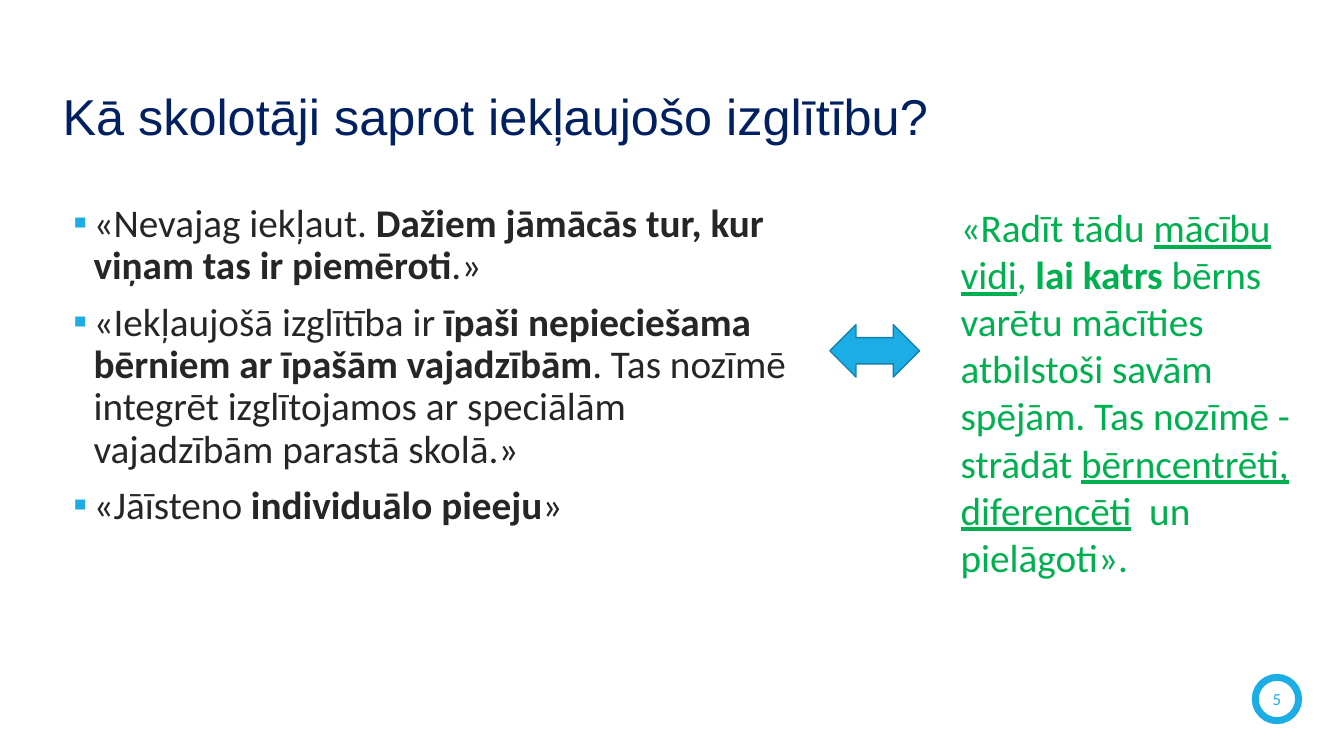
"""Build a slide on how teachers understand inclusive education."""
from lxml.etree import SubElement
from pptx import Presentation
from pptx.dml.color import RGBColor
from pptx.enum.shapes import MSO_SHAPE as Shape
from pptx.enum.text import MSO_ANCHOR as Anchor, MSO_AUTO_SIZE as AutoSize, PP_ALIGN as Align
from pptx.oxml.ns import qn
from pptx.util import Inches, Pt

NAVY = RGBColor(0x00, 0x20, 0x60)
BLUE = RGBColor(0x1C, 0xAD, 0xE4)
DARK_BLUE = RGBColor(0x15, 0x80, 0xA9)
GREEN = RGBColor(0x00, 0xB0, 0x50)
CHARCOAL = RGBColor(0x26, 0x26, 0x26)
WHITE = RGBColor(0xFF, 0xFF, 0xFF)

PLAIN, BOLD, UNDERLINE = "plain", "bold", "underline"

TEACHER_QUOTES = [
    [("«Nevajag iekļaut. ", PLAIN),
     ("Dažiem jāmācās tur, kur viņam tas ir piemēroti", BOLD),
     (".»", PLAIN)],
    [("«Iekļaujošā izglītība ir ", PLAIN),
     ("īpaši nepieciešama bērniem ar īpašām vajadzībām", BOLD),
     (". Tas nozīmē integrēt izglītojamos ar speciālām vajadzībām parastā skolā.»", PLAIN)],
    [("«Jāīsteno ", PLAIN), ("individuālo pieeju", BOLD), ("»", PLAIN)],
]
INCLUSIVE_QUOTE = [
    ("«Radīt tādu ", PLAIN),
    ("mācību vidi", UNDERLINE),
    (", ", PLAIN),
    ("lai katrs ", BOLD),
    ("bērns varētu mācīties atbilstoši savām spējām. Tas nozīmē - strādāt ", PLAIN),
    ("bērncentrēti, diferencēti", UNDERLINE),
    ("  un pielāgoti».", PLAIN),
]


def format_run(run, size, color, font="Calibri", style=PLAIN):
    run.font.name = font
    run.font.size = Pt(size)
    run.font.color.rgb = color
    run.font.bold = style == BOLD
    run.font.underline = style == UNDERLINE


def add_title(slide, text):
    title = slide.shapes.title
    title.left, title.top = Inches(0.52), Inches(0.71)
    title.width, title.height = Inches(10.96), Inches(0.87)
    title.fill.solid()
    title.fill.fore_color.rgb = WHITE
    frame = title.text_frame
    frame.text = text
    frame.auto_size = AutoSize.NONE
    frame.vertical_anchor = Anchor.MIDDLE
    paragraph = frame.paragraphs[0]
    paragraph.alignment = Align.LEFT
    format_run(paragraph.runs[0], 36, NAVY, "Arial")


def add_bullet(paragraph):
    paragraph.line_spacing = 0.9
    paragraph.space_before = Pt(10)
    properties = paragraph._p.get_or_add_pPr()
    properties.set("marL", str(Inches(0.2)))
    properties.set("indent", str(Inches(-0.2)))
    bullet_color = SubElement(properties, qn("a:buClr"))
    SubElement(bullet_color, qn("a:srgbClr"), val=str(BLUE))
    SubElement(properties, qn("a:buFont"), typeface="Calibri")
    SubElement(properties, qn("a:buChar"), char="▪")


def add_quotes(slide, left, top, width, height, quotes, color, bulleted=False):
    box = slide.shapes.add_textbox(Inches(left), Inches(top), Inches(width), Inches(height))
    frame = box.text_frame
    frame.word_wrap = True
    for index, quote in enumerate(quotes):
        paragraph = frame.add_paragraph() if index else frame.paragraphs[0]
        if bulleted:
            add_bullet(paragraph)
        for text, style in quote:
            run = paragraph.add_run()
            run.text = text
            format_run(run, 28, color, style=style)


def add_outlined_shape(slide, kind, left, top, width, height, fill, line, line_width):
    shape = slide.shapes.add_shape(kind, Inches(left), Inches(top), Inches(width), Inches(height))
    shape.shadow.inherit = False
    shape.fill.solid()
    shape.fill.fore_color.rgb = fill
    shape.line.color.rgb = line
    shape.line.width = Pt(line_width)
    return shape


def add_slide_number(slide, number):
    circle = add_outlined_shape(slide, Shape.OVAL, 12.45, 6.72, 0.43, 0.43, WHITE, BLUE, 5)
    frame = circle.text_frame
    frame.margin_left = frame.margin_right = frame.margin_top = frame.margin_bottom = 0
    frame.vertical_anchor = Anchor.MIDDLE
    frame.text = number
    paragraph = frame.paragraphs[0]
    paragraph.alignment = Align.CENTER
    format_run(paragraph.runs[0], 12, BLUE)


def main():
    presentation = Presentation()
    presentation.slide_width, presentation.slide_height = Inches(13.33), Inches(7.5)
    slide = presentation.slides.add_slide(presentation.slide_layouts.get_by_name("Title Only"))
    add_title(slide, "Kā skolotāji saprot iekļaujošo izglītību?")
    add_quotes(slide, 0.63, 1.97, 7.29, 4.85, TEACHER_QUOTES, CHARCOAL, bulleted=True)
    add_slide_number(slide, "5")
    add_quotes(slide, 9.43, 1.97, 3.54, 3.87, [INCLUSIVE_QUOTE], GREEN)
    add_outlined_shape(slide, Shape.LEFT_RIGHT_ARROW, 8.23, 3.22, 0.89, 0.52, BLUE, DARK_BLUE, 1)
    presentation.save("out.pptx")


if __name__ == "__main__":
    main()
